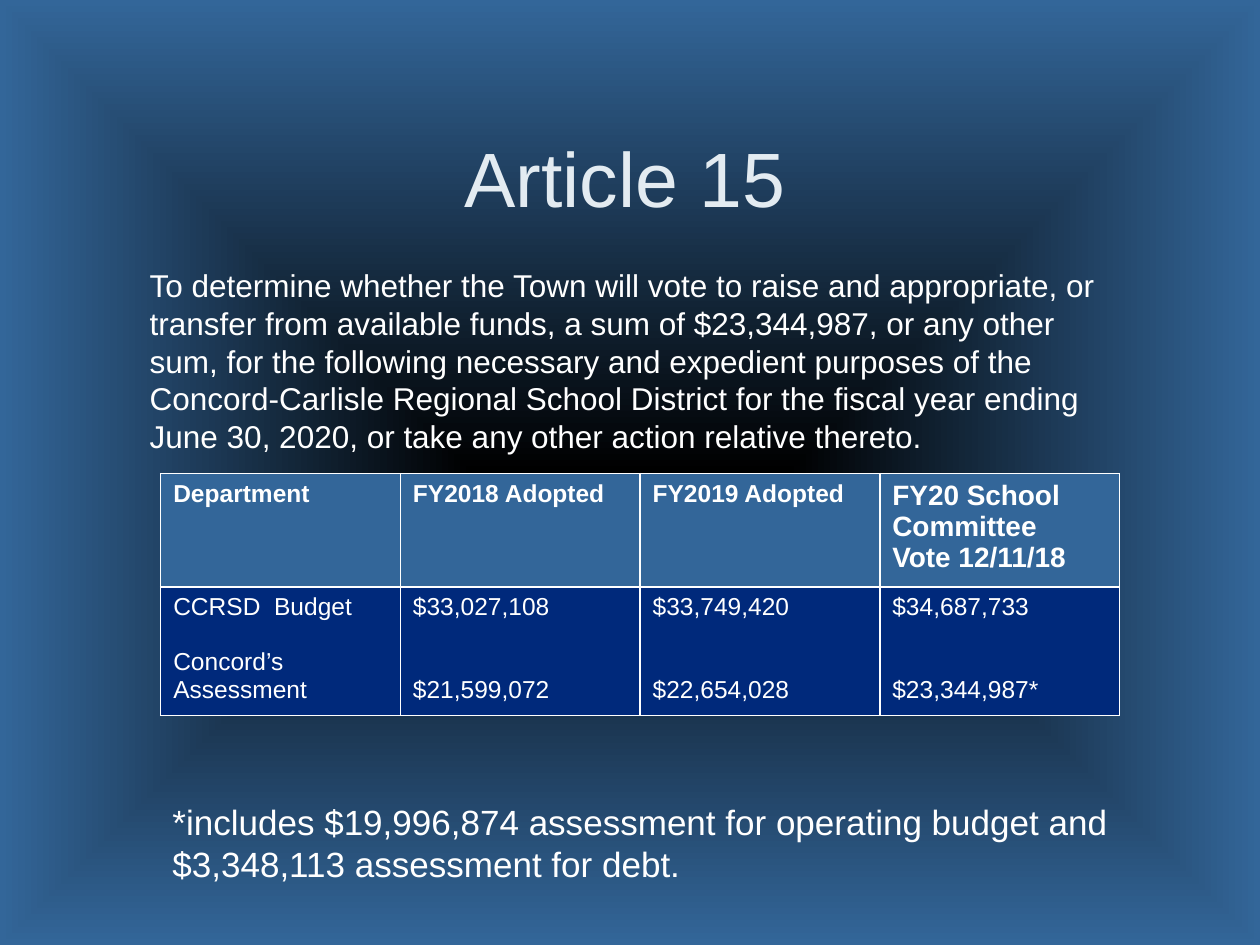
from lxml.etree import SubElement
from pptx import Presentation
from pptx.dml.color import RGBColor
from pptx.enum.text import MSO_ANCHOR, PP_ALIGN
from pptx.oxml.ns import qn
from pptx.util import Inches, Pt

BLACK = RGBColor(0x00, 0x00, 0x00)
WHITE = RGBColor(0xFF, 0xFF, 0xFF)
PALE = RGBColor(0xE3, 0xEB, 0xF1)
STEEL = RGBColor(0x33, 0x66, 0x99)
NAVY = RGBColor(0x00, 0x29, 0x7B)

FONT = "Arial"
WIDTH, HEIGHT = Inches(10), Inches(7.5)
LINE = 15.7  # one line of table text, in points

ARTICLE = (
    "To determine whether the Town will vote to raise and appropriate, or "
    "transfer from available funds, a sum of $23,344,987, or any other sum, "
    "for the following necessary and expedient purposes of the "
    "Concord-Carlisle Regional School District for the fiscal year ending "
    "June 30, 2020, or take any other action relative thereto."
)
FOOTNOTE = [
    "*includes $19,996,874 assessment for operating budget and",
    "$3,348,113 assessment for debt.",
]
HEADERS = [
    ["Department"],
    ["FY2018 Adopted"],
    ["FY2019 Adopted"],
    ["FY20 School Committee", "Vote 12/11/18"],
]
FIGURES = [
    ["CCRSD  Budget", "Concord’s Assessment"],
    ["$33,027,108", "$21,599,072"],
    ["$33,749,420", "$22,654,028"],
    ["$34,687,733", "$23,344,987*"],
]


def across(percent):
    """Length as a percentage of the slide's width."""
    return int(WIDTH * percent / 100)


def down(percent):
    """Length as a percentage of the slide's height."""
    return int(HEIGHT * percent / 100)


def write_text(frame, lines, size, color=WHITE, bold=False,
               align=PP_ALIGN.LEFT, gap=0):
    """Write one paragraph per line, with a gap in points between them."""
    for index, line in enumerate(lines):
        paragraph = frame.add_paragraph() if index else frame.paragraphs[0]
        paragraph.text = line
        paragraph.alignment = align
        paragraph.space_before = Pt(gap if index else 0)
        font = paragraph.font
        font.name, font.size, font.bold = FONT, Pt(size), bold
        font.color.rgb = color


def add_text(slide, left, top, width, height, lines, size,
             anchor=MSO_ANCHOR.TOP, **text_format):
    """Add a text box placed by percentages of the slide's size."""
    box = slide.shapes.add_textbox(
        across(left), down(top), across(width), down(height))
    frame = box.text_frame
    frame.word_wrap = True
    frame.vertical_anchor = anchor
    write_text(frame, lines, size, **text_format)


def paint_background(slide):
    """Fade from black in the centre to steel blue at the edges."""
    fill = slide.background.fill
    fill.gradient()
    for stop, color in zip(fill.gradient_stops, (BLACK, STEEL)):
        stop.color.rgb = color
    gradient = slide.element.find(".//" + qn("a:gradFill"))
    gradient.remove(gradient.find(qn("a:lin")))
    shade = SubElement(gradient, qn("a:path"), {"path": "shape"})
    SubElement(shade, qn("a:fillToRect"), dict.fromkeys("ltrb", "50000"))


def style_cell(cell, color):
    """Give a cell white borders and a plain fill."""
    properties = cell._tc.get_or_add_tcPr()
    for side in ("a:lnL", "a:lnR", "a:lnT", "a:lnB"):
        line = SubElement(properties, qn(side), {"w": str(Pt(1))})
        solid = SubElement(line, qn("a:solidFill"))
        SubElement(solid, qn("a:srgbClr"), {"val": str(WHITE)})
    cell.fill.solid()
    cell.fill.fore_color.rgb = color


def add_budget_table(slide, left, top, width, row_percents):
    row_heights = [down(percent) for percent in row_percents]
    table = slide.shapes.add_table(
        len(row_heights), len(HEADERS), across(left), down(top),
        across(width), sum(row_heights)).table
    for row, height in zip(table.rows, row_heights):
        row.height = height
    for column, (header, figures) in enumerate(zip(HEADERS, FIGURES)):
        header_cell, figure_cell = table.cell(0, column), table.cell(1, column)
        style_cell(header_cell, STEEL)
        style_cell(figure_cell, NAVY)
        write_text(header_cell.text_frame, header,
                   16 if len(header) > 1 else 14, bold=True)
        # The department label wraps, so it needs one line less of gap
        write_text(figure_cell.text_frame, figures, 14,
                   gap=LINE if column == 0 else 2 * LINE)


def main():
    presentation = Presentation()
    presentation.slide_width, presentation.slide_height = WIDTH, HEIGHT
    slide = presentation.slides.add_slide(presentation.slide_layouts[6])
    paint_background(slide)

    # Title and article wording
    add_text(slide, 10, 12.5, 79.2, 12.3, ["Article 15"], 44, color=PALE,
             anchor=MSO_ANCHOR.MIDDLE, align=PP_ALIGN.CENTER)
    add_text(slide, 10.9, 27.5, 79, 61.6, [ARTICLE], 18)

    # Budget figures and their footnote
    add_budget_table(slide, 12.75, 50.13, 76.1, (11.25, 13.1))
    add_text(slide, 12.7, 84.1, 76.9, 10.3, FOOTNOTE, 20)

    presentation.save("out.pptx")


if __name__ == "__main__":
    main()
